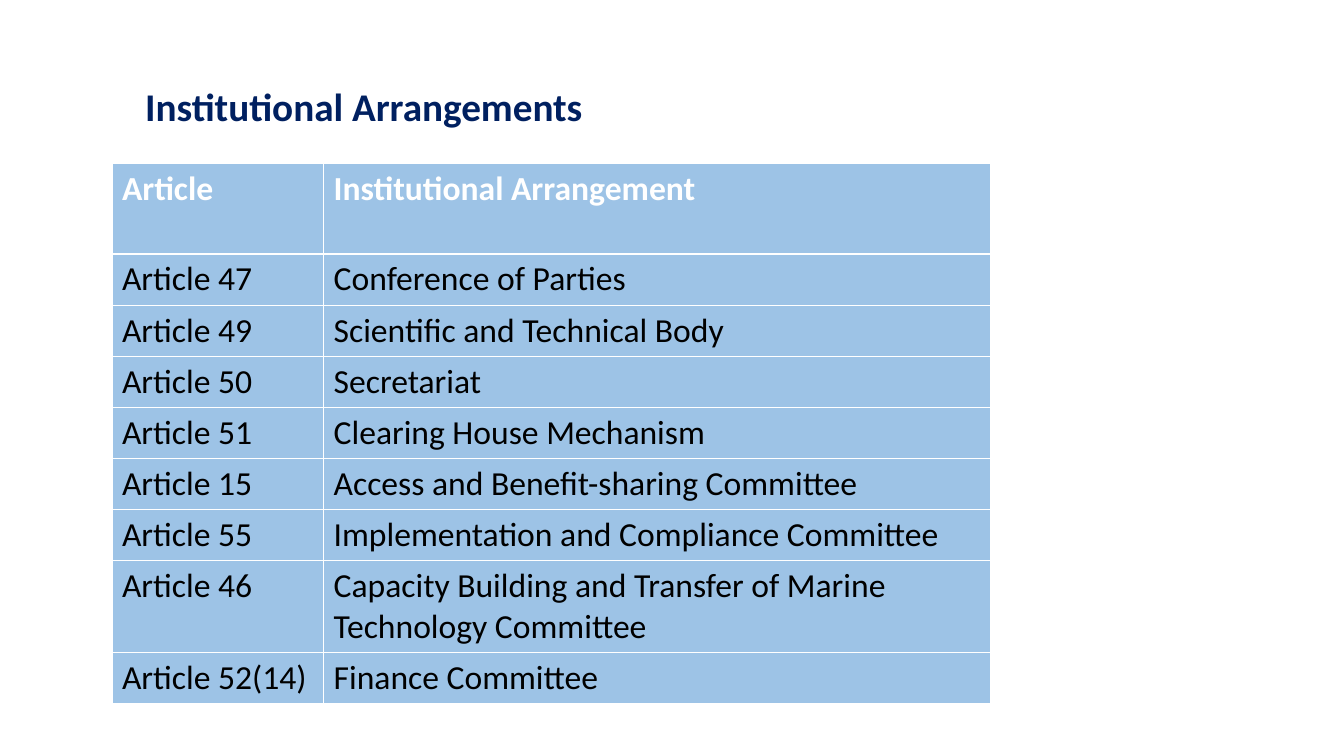
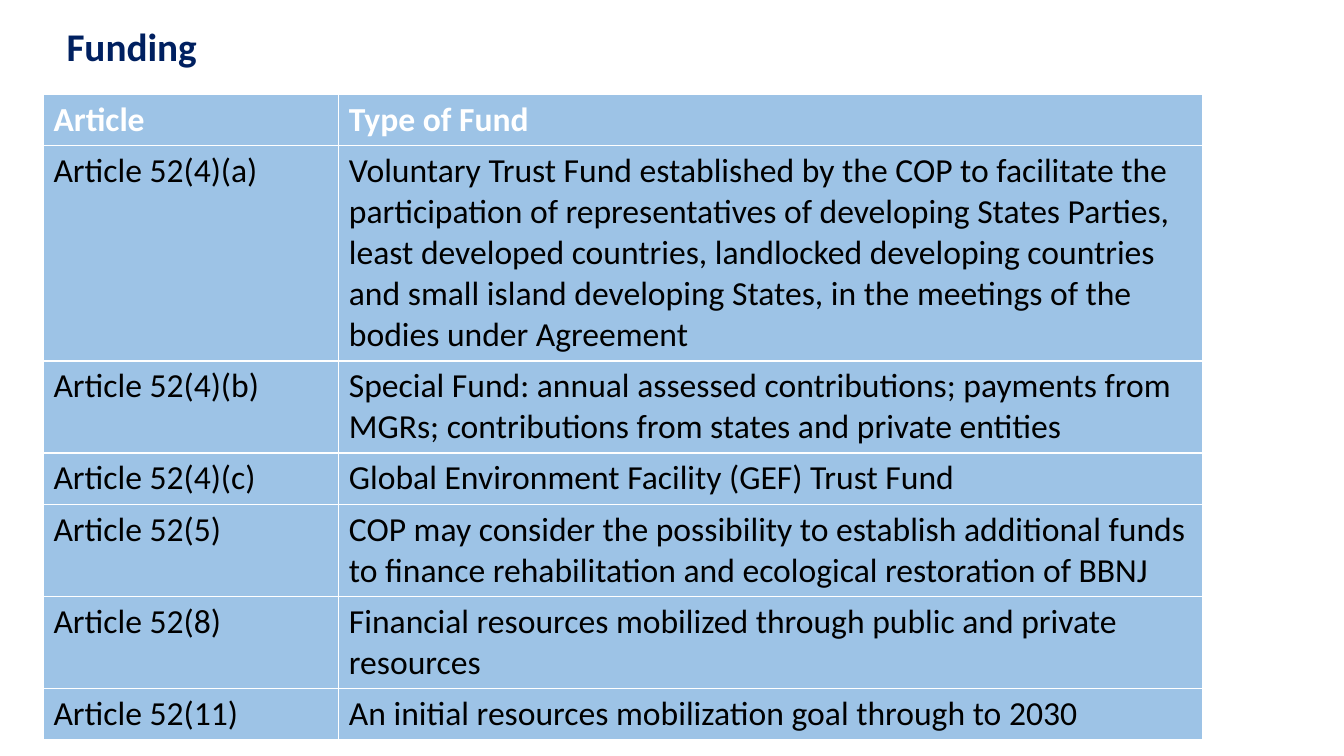
"""Build two slides that list articles of an agreement in tables."""
from pptx import Presentation
from pptx import util as u
from pptx.dml.color import RGBColor
from pptx.enum import text

SLIDE_WIDTH, SLIDE_HEIGHT = u.Inches(13.33), u.Inches(7.5)
COLORS = {"title": "002060", "cell": "9DC3E6", "header": "FFFFFF", "body": "000000"}
FONT = "Calibri"
TITLE_LAYOUT = 5
LINE_HEIGHT, ROW_PADDING = u.Inches(0.4), u.Inches(0.1)
TITLE_WIDTH, TITLE_HEIGHT = 67.14, 7.6

INSTITUTIONS = [
    ("Article", "Institutional Arrangement", 2),
    ("Article 47", "Conference of Parties", 1),
    ("Article 49", "Scientific and Technical Body", 1),
    ("Article 50", "Secretariat", 1),
    ("Article 51", "Clearing House Mechanism", 1),
    ("Article 15", "Access and Benefit-sharing Committee", 1),
    ("Article 55", "Implementation and Compliance Committee", 1),
    ("Article 46", "Capacity Building and Transfer of Marine Technology Committee", 2),
    ("Article 52(14)", "Finance Committee", 1),
]
FUNDS = [
    ("Article", "Type of Fund", 1),
    ("Article 52(4)(a)", "Voluntary Trust Fund established by the COP to facilitate the "
     "participation of representatives of developing States Parties, least developed "
     "countries, landlocked developing countries and small island developing States, "
     "in the meetings of the bodies under Agreement", 5),
    ("Article 52(4)(b)", "Special Fund: annual assessed contributions; payments from MGRs; "
     "contributions from states and private entities", 2),
    ("Article 52(4)(c)", "Global Environment Facility (GEF) Trust Fund", 1),
    ("Article 52(5)", "COP may consider the possibility to establish additional funds to "
     "finance rehabilitation and ecological restoration of BBNJ", 2),
    ("Article 52(8)", "Financial resources mobilized through public and private resources", 2),
    ("Article 52(11)", "An initial resources mobilization goal through to 2030", 1),
]


def across(percent):
    """Return a share of the slide width."""
    return round(SLIDE_WIDTH * percent / 100)


def down(percent):
    """Return a share of the slide height."""
    return round(SLIDE_HEIGHT * percent / 100)


def style_paragraph(paragraph, size, color, bold):
    """Set the shared font and left alignment on a paragraph."""
    paragraph.alignment = text.PP_ALIGN.LEFT
    paragraph.font.name = FONT
    paragraph.font.size = u.Pt(size)
    paragraph.font.bold = bold
    paragraph.font.color.rgb = RGBColor.from_string(COLORS[color])


def place_title(slide, wording, left, top):
    """Move and format the title placeholder."""
    title = slide.shapes.title
    title.left, title.top = across(left), down(top)
    title.width, title.height = across(TITLE_WIDTH), down(TITLE_HEIGHT)
    frame = title.text_frame
    frame.text = wording
    frame.word_wrap = True
    frame.auto_size = text.MSO_AUTO_SIZE.NONE
    frame.vertical_anchor = text.MSO_ANCHOR.TOP
    style_paragraph(frame.paragraphs[0], 28, "title", True)


def place_table(slide, rows, left, top, width, first_share):
    """Add a two-column table whose row heights follow their line counts."""
    heights = [lines * LINE_HEIGHT + ROW_PADDING for *_, lines in rows]
    total_width = across(width)
    table = slide.shapes.add_table(
        len(rows), 2, across(left), down(top), total_width, sum(heights)).table
    table.horz_banding = False
    table.columns[0].width = round(total_width * first_share / 100)
    table.columns[1].width = total_width - table.columns[0].width
    for index, (*wordings, _) in enumerate(rows):
        table.rows[index].height = heights[index]
        for column, wording in enumerate(wordings):
            cell = table.cell(index, column)
            cell.text = wording
            cell.fill.solid()
            cell.fill.fore_color.rgb = RGBColor.from_string(COLORS["cell"])
            style_paragraph(cell.text_frame.paragraphs[0], 24,
                            "body" if index else "header", index == 0)


def add_table_slide(presentation, wording, title_at, rows, table_at):
    """Add a slide with a title above a table."""
    slide = presentation.slides.add_slide(presentation.slide_layouts[TITLE_LAYOUT])
    place_title(slide, wording, *title_at)
    place_table(slide, rows, *table_at)


def main():
    """Build and save the presentation."""
    presentation = Presentation()
    presentation.slide_width, presentation.slide_height = SLIDE_WIDTH, SLIDE_HEIGHT
    add_table_slide(presentation, "Institutional Arrangements", (10.05, 10.27),
                    INSTITUTIONS, (8.33, 21.6, 65.4, 24.08))
    add_table_slide(presentation, "Funding", (4.2, 2.27),
                    FUNDS, (3.23, 12.53, 86.27, 25.48))
    presentation.save("out.pptx")


if __name__ == "__main__":
    main()
